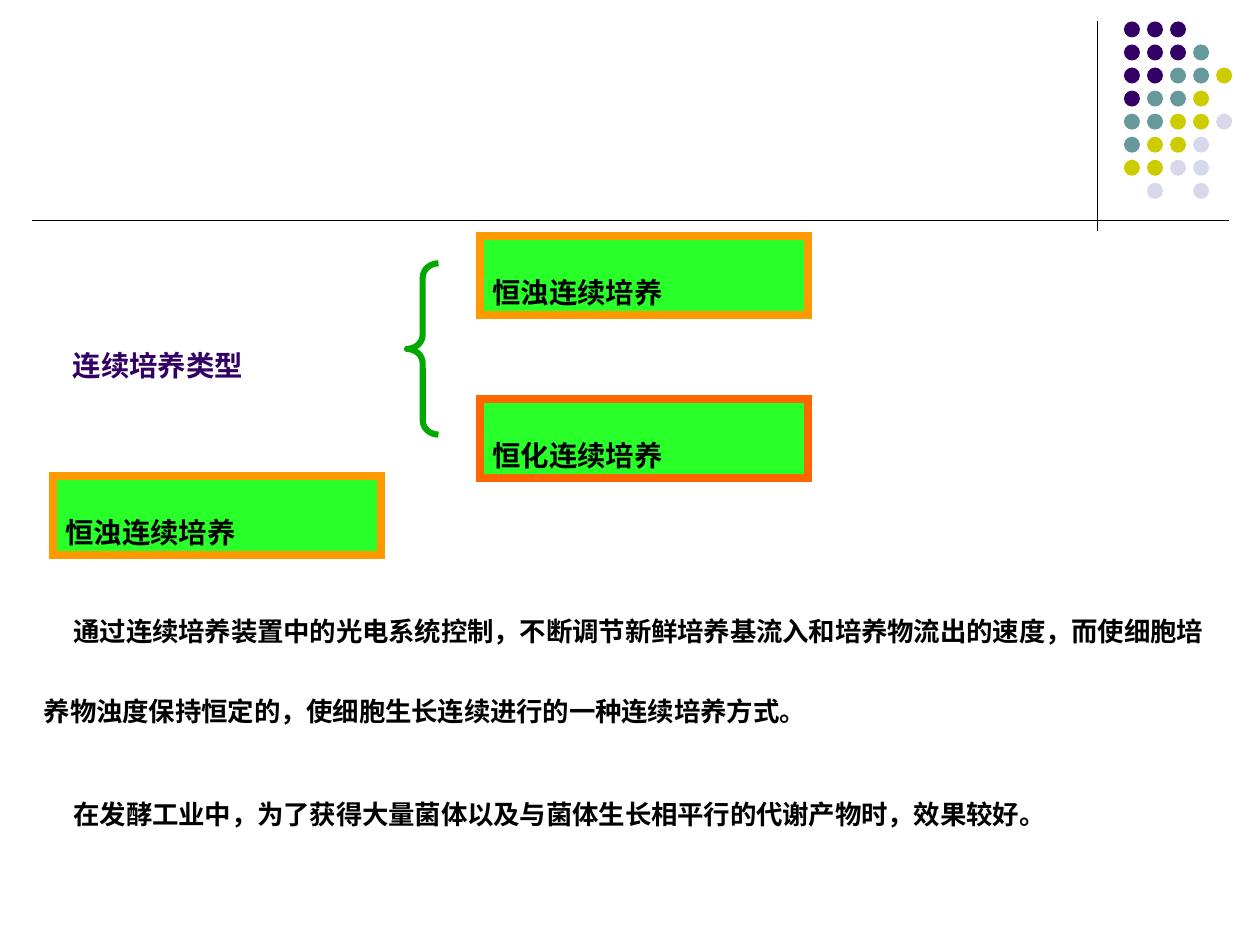
import pptx
import pptx.util
import pptx.dml.color
import pptx.enum.shapes
import pptx.enum.text
import pptx.oxml
import pptx.oxml.ns

RGBColor = pptx.dml.color.RGBColor
MSO_SHAPE = pptx.enum.shapes.MSO_SHAPE
BLACK = RGBColor(0x00, 0x00, 0x00)
PURPLE = RGBColor(0x33, 0x00, 0x66)
TEAL = RGBColor(0x66, 0x99, 0x99)
OLIVE = RGBColor(0xCC, 0xCC, 0x00)
LAVENDER = RGBColor(0xD8, 0xD8, 0xEC)
GREEN = RGBColor(0x29, 0xFF, 0x29)
DARK_GREEN = RGBColor(0x00, 0xA8, 0x00)
ORANGE = RGBColor(0xFF, 0x99, 0x00)
RED_ORANGE = RGBColor(0xFF, 0x66, 0x00)
SERIF = "Times New Roman"
SANS = "Noto Sans CJK SC"

prs = pptx.Presentation()
prs.slide_width = pptx.util.Inches(10)
prs.slide_height = pptx.util.Inches(7.5)
s = prs.slides.add_slide(prs.slide_layouts[6])
shapes = s.shapes

# The slide is a grid of 100 columns by 75 rows of square cells
CELL = prs.slide_width // 100


def cells(*counts):
    """Turn counts of grid cells into lengths."""
    return [round(n * CELL) for n in counts]


def write(sp, paragraphs, size, font, color):
    """Fill a shape with bold subscript text set from the top left."""
    tf = sp.text_frame
    tf.word_wrap = True
    tf.vertical_anchor = pptx.enum.text.MSO_ANCHOR.TOP
    tf.text = "\n".join(paragraphs)
    for p in tf.paragraphs:
        p.alignment = pptx.enum.text.PP_ALIGN.LEFT
        for r in p.runs:
            r.font.size = pptx.util.Pt(size)
            r.font.bold = True
            r.font.name = font
            r.font.color.rgb = color
            rPr = r.font._element
            rPr.set("baseline", "-25000")
            ea = pptx.oxml.parse_xml(
                f'<a:ea {pptx.oxml.ns.nsdecls("a")} typeface="{SANS}"/>')
            rPr.find(pptx.oxml.ns.qn("a:latin")).addnext(ea)


# Vertical and horizontal rules
for ends in ((87.1, 1.7, 87.1, 18.3), (2.5, 17.5, 97.5, 17.5)):
    rule = shapes.add_connector(pptx.enum.shapes.MSO_CONNECTOR.STRAIGHT, *cells(*ends))
    rule.line.color.rgb = BLACK
    rule.line.width = pptx.util.Pt(0.75)
    rule._element.spPr.append(
        pptx.oxml.parse_xml(f'<a:effectLst {pptx.oxml.ns.nsdecls("a")}/>'))

# Dot pattern in the corner, one letter per dot
DOT_COLORS = {"P": PURPLE, "T": TEAL, "O": OLIVE, "L": LAVENDER}
DOT_ROWS = ["PPP", "PPPT", "PPTTO", "PTTO", "TTOOL", "TOOL", "OOLL", " L L"]
DOT_PITCH = 1.83
for row, letters in enumerate(DOT_ROWS):
    for col, letter in enumerate(letters):
        if letter in DOT_COLORS:
            dot = shapes.add_shape(MSO_SHAPE.OVAL, *cells(
                89.2 + col * DOT_PITCH, 1.7 + row * DOT_PITCH, 1.27, 1.27))
            dot.shadow.inherit = False
            dot.fill.solid()
            dot.fill.fore_color.rgb = DOT_COLORS[letter]
            dot.line.fill.background()

# Heading and brace
heading = shapes.add_textbox(*cells(4.8, 24.5, 26.7, 5.7))
write(heading, ["连续培养类型"], 28, SERIF, PURPLE)

brace = shapes.add_shape(MSO_SHAPE.LEFT_BRACE, *cells(32.3, 20.9, 2.5, 13.6))
brace.shadow.inherit = False
brace.adjustments[0] = 0.45
brace.fill.background()
brace.line.color.rgb = DARK_GREEN
brace.line.width = pptx.util.Pt(3.5)

# Culture types, then the one explained below
for left, top, label, border in (
    (38.1, 18.7, "恒浊连续培养", ORANGE),
    (38.1, 31.7, "恒化连续培养", RED_ORANGE),
    (4.2, 37.8, "恒浊连续培养", ORANGE),
):
    box = shapes.add_shape(MSO_SHAPE.RECTANGLE, *cells(left, top, 26.05, 6.27))
    box.shadow.inherit = False
    box.fill.solid()
    box.fill.fore_color.rgb = GREEN
    box.line.color.rgb = border
    box.line.width = pptx.util.Pt(4.5)
    box.line._get_or_add_ln().append(pptx.oxml.parse_xml(
        f'<a:miter {pptx.oxml.ns.nsdecls("a")} lim="800000"/>'))
    write(box, [label], 28, SERIF, BLACK)

# Explanation
body = shapes.add_textbox(*cells(2.5, 44.4, 95.8, 31.4))
write(body, [
    "通过连续培养装置中的光电系统控制，不断调节新鲜培养基流入和培养物流出的速度，"
    "而使细胞培养物浊度保持恒定的，使细胞生长连续进行的一种连续培养方式。",
    "在发酵工业中，为了获得大量菌体以及与菌体生长相平行的代谢产物时，效果较好。",
], 26, SANS, BLACK)
for p in body.text_frame.paragraphs:
    p.line_spacing = 1.3
    p._p.get_or_add_pPr().set("indent", str(cells(2.35)[0]))
body.text_frame.paragraphs[1].space_before = pptx.util.Pt(12.5)

prs.save("out.pptx")
